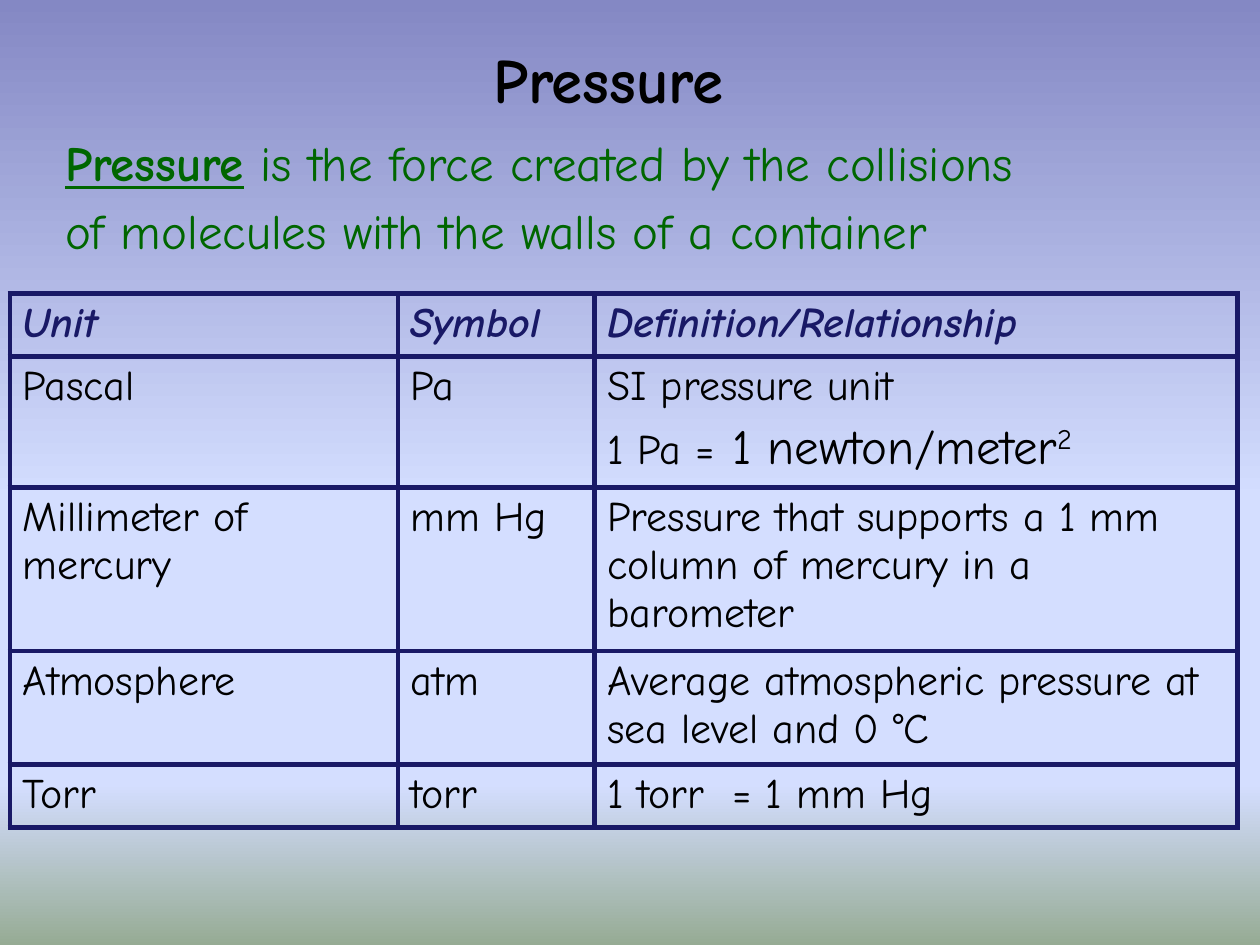
from copy import deepcopy

from lxml import etree
from pptx import Presentation
from pptx.dml.color import RGBColor
from pptx.enum.text import MSO_ANCHOR, PP_ALIGN
from pptx.oxml.ns import qn
from pptx.util import Inches, Pt

MIDDLE = MSO_ANCHOR.MIDDLE
CENTER = PP_ALIGN.CENTER
FONT = "Comic Neue"
COLORS = {
    "text": "000000",
    "definition": "006600",
    "navy": "191966",
    "sky": "8488C4",
    "pale": "D4DEFF",
    "ground": "96AB94",
}
SKY_STOPS = [(0, "sky"), (53, "pale"), (83, "pale"), (100, "ground")]
COLUMN_WIDTHS = [3.08, 1.56, 5.1]
ROW_HEIGHTS = [0.48, 1.01, 1.25, 0.87, 0.48]
UNITS = [
    ["Unit", "Symbol", "Definition/Relationship"],
    ["Pascal", "Pa", "SI pressure unit"],
    ["Millimeter of mercury", "mm Hg",
     "Pressure that supports a 1 mm column of mercury in a barometer"],
    ["Atmosphere", "atm", "Average atmospheric pressure at sea level and 0 °C"],
    ["Torr", "torr", "1 torr  = 1 mm Hg"],
]


class PressureSlide:
    """Holds the style and the slide, and adds each kind of element."""

    def __init__(self, slide):
        self.slide = slide

    def background(self, stops):
        fill = self.slide.background.fill
        fill.gradient()
        fill.gradient_angle = 270
        stop_list = next(self.slide.element.iter(qn("a:gsLst")))
        template = deepcopy(stop_list[0])
        for old_stop in list(stop_list):
            stop_list.remove(old_stop)
        for position, color in stops:
            stop = deepcopy(template)
            stop.set("pos", str(position * 1000))
            for child in list(stop):
                stop.remove(child)
            etree.SubElement(stop, qn("a:srgbClr"), val=COLORS[color])
            stop_list.append(stop)

    def style(self, run, size, color="text", bold=False, italic=False, underline=False):
        font = run.font
        font.name = FONT
        font.size = Pt(size)
        font.bold = bold
        font.italic = italic
        font.underline = underline
        font.color.rgb = RGBColor.from_string(COLORS[color])

    def add_run(self, paragraph, text, size, **look):
        run = paragraph.add_run()
        run.text = text
        self.style(run, size, **look)
        return run

    def text_box(self, left, top, width, height):
        frame = self.slide.shapes.add_textbox(
            Inches(left), Inches(top), Inches(width), Inches(height)).text_frame
        frame.word_wrap = True
        return frame

    def title(self, text):
        frame = self.text_box(0.58, 0, 8.5, 1.25)
        frame.vertical_anchor = MIDDLE
        frame.text = text
        frame.paragraphs[0].alignment = CENTER
        self.style(frame.paragraphs[0].runs[0], 36, bold=True)

    def definition(self, term, first_line, second_line):
        frame = self.text_box(0.42, 1, 9.08, 1.42)
        opening, closing = frame.paragraphs[0], frame.add_paragraph()
        self.add_run(opening, term, 28, color="definition", bold=True, underline=True)
        self.add_run(opening, first_line, 28, color="definition")
        self.add_run(closing, second_line, 28, color="definition")
        for paragraph in (opening, closing):
            paragraph.space_before = Pt(5.6)
            properties = paragraph._p.get_or_add_pPr()
            properties.set("marL", str(Inches(0.38)))
            properties.set("indent", str(Inches(-0.38)))

    def border(self, cell):
        properties = cell._tc.get_or_add_tcPr()
        for index, side in enumerate(("lnL", "lnR", "lnT", "lnB")):
            line = etree.Element(qn(f"a:{side}"), w=str(Pt(3)))
            fill = etree.SubElement(line, qn("a:solidFill"))
            etree.SubElement(fill, qn("a:srgbClr"), val=COLORS["navy"])
            properties.insert(index, line)

    def table(self, rows):
        table = self.slide.shapes.add_table(
            len(rows), len(rows[0]), Inches(0.08), Inches(2.33),
            Inches(sum(COLUMN_WIDTHS)), Inches(sum(ROW_HEIGHTS))).table
        table.first_row = table.horz_banding = False
        for column, width in zip(table.columns, COLUMN_WIDTHS):
            column.width = Inches(width)
        for row, height in zip(table.rows, ROW_HEIGHTS):
            row.height = Inches(height)
        for row_index, row in enumerate(rows):
            header = row_index == 0
            for column_index, text in enumerate(row):
                cell = table.cell(row_index, column_index)
                cell.fill.background()
                self.border(cell)
                cell.text_frame.text = text
                self.style(cell.text_frame.paragraphs[0].runs[0], 24,
                           color="navy" if header else "text",
                           bold=header, italic=header)
        return table

    def pascal_relation(self, cell):
        relation = cell.text_frame.add_paragraph()
        self.add_run(relation, "1 Pa =", 24)
        self.add_run(relation, " ", 28, bold=True)
        self.add_run(relation, "1 newton/meter", 28)
        exponent = self.add_run(relation, "2", 28)
        exponent.font._element.set("baseline", "30000")
        for paragraph in cell.text_frame.paragraphs:
            paragraph.space_before = Pt(5)


def main():
    deck = Presentation()
    deck.slide_width, deck.slide_height = Inches(10), Inches(7.5)
    pressure = PressureSlide(deck.slides.add_slide(deck.slide_layouts[6]))
    pressure.background(SKY_STOPS)
    pressure.title("Pressure")
    units = pressure.table(UNITS)
    pressure.pascal_relation(units.cell(1, 2))
    pressure.definition("Pressure", " is the force created by the collisions",
                        "of molecules with the walls of a container")
    deck.save("out.pptx")


if __name__ == "__main__":
    main()
